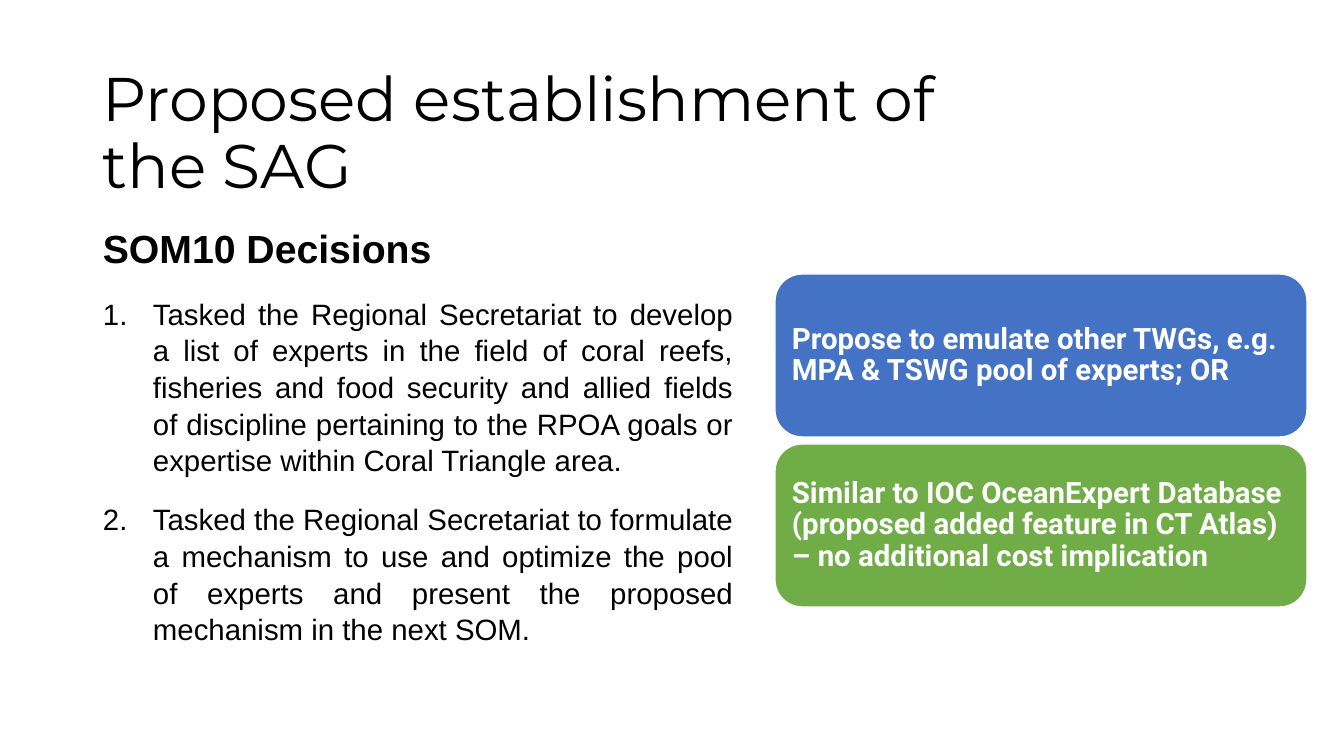
from lxml.etree import SubElement
from pptx import Presentation
from pptx.dml.color import RGBColor
from pptx.enum.shapes import MSO_SHAPE
from pptx.enum.text import MSO_ANCHOR, PP_ALIGN
from pptx.oxml.ns import qn
from pptx.util import Pt

BLACK = RGBColor(0x00, 0x00, 0x00)
WHITE = RGBColor(0xFF, 0xFF, 0xFF)
BLUE = RGBColor(0x44, 0x72, 0xC4)
GREEN = RGBColor(0x70, 0xAD, 0x47)

EMU_PER_PX = 914400 / 100.8
NUMBER_INDENT = 50

DECISIONS = [
    "Tasked the Regional Secretariat to develop a list of experts in the field of "
    "coral reefs, fisheries and food security and allied fields of discipline "
    "pertaining to the RPOA goals or expertise within Coral Triangle area.",
    "Tasked the Regional Secretariat to formulate a mechanism to use and optimize "
    "the pool of experts and present the proposed mechanism in the next SOM.",
]
OPTIONS = [
    ("Propose to emulate other TWGs, e.g. MPA & TSWG pool of experts; OR", BLUE),
    ("Similar to IOC OceanExpert Database (proposed added feature in CT Atlas) "
     "– no additional cost implication", GREEN),
]


def px(length):
    return round(length * EMU_PER_PX)


def write_text(paragraph, text, *, font, size, color=BLACK, bold=False,
               align=PP_ALIGN.LEFT, line_spacing=0.9, before=0, after=0, numbered=False):
    paragraph.alignment = align
    paragraph.line_spacing = line_spacing
    paragraph.space_before = Pt(before)
    paragraph.space_after = Pt(after)
    if numbered:
        properties = paragraph._p.get_or_add_pPr()
        properties.set("marL", str(px(NUMBER_INDENT)))
        properties.set("indent", str(-px(NUMBER_INDENT)))
        SubElement(properties, qn("a:buFont"), typeface="+mj-lt")
        SubElement(properties, qn("a:buAutoNum"), type="arabicPeriod")
    run = paragraph.add_run()
    run.text = text
    run.font.name = font
    run.font.size = Pt(size)
    run.font.bold = bold
    run.font.color.rgb = color


class SlideBuilder:
    title_font = "Montserrat"
    body_font = "Arial"
    card_font = "Roboto"

    def __init__(self, slide):
        self.slide = slide

    def text_frame(self, left, top, width, height, anchor):
        box = self.slide.shapes.add_textbox(px(left), px(top), px(width), px(height))
        frame = box.text_frame
        frame.word_wrap = True
        frame.vertical_anchor = anchor
        return frame

    def title(self, text, *bounds):
        frame = self.text_frame(*bounds, MSO_ANCHOR.MIDDLE)
        write_text(frame.paragraphs[0], text, font=self.title_font, size=44)

    def numbered_list(self, heading, items, *bounds):
        frame = self.text_frame(*bounds, MSO_ANCHOR.TOP)
        style = dict(font=self.body_font, align=PP_ALIGN.JUSTIFY, line_spacing=1.04, after=6)
        write_text(frame.paragraphs[0], heading, size=28, bold=True, **style)
        for item in items:
            write_text(frame.add_paragraph(), item, size=21, before=10, numbered=True, **style)

    def card(self, text, fill, left, top, width, height):
        shape = self.slide.shapes.add_shape(
            MSO_SHAPE.ROUNDED_RECTANGLE, px(left), px(top), px(width), px(height))
        shape.shadow.inherit = False
        shape.fill.solid()
        shape.fill.fore_color.rgb = fill
        shape.line.color.rgb = WHITE
        shape.line.width = Pt(1)
        frame = shape.text_frame
        frame.word_wrap = True
        frame.vertical_anchor = MSO_ANCHOR.MIDDLE
        frame.margin_left = frame.margin_right = px(9)
        frame.margin_top = frame.margin_bottom = px(9)
        write_text(frame.paragraphs[0], text, font=self.card_font, size=21,
                   color=WHITE, bold=True)


def main():
    presentation = Presentation()
    presentation.slide_width = px(1344)
    presentation.slide_height = px(756)
    builder = SlideBuilder(presentation.slides.add_slide(presentation.slide_layouts[6]))

    builder.title("Proposed establishment of the SAG", 93, 62, 900, 146)
    builder.numbered_list("SOM10 Decisions", DECISIONS, 93, 218, 650, 514)

    card_height, card_gap = 163, 7
    for index, (text, fill) in enumerate(OPTIONS):
        top = 274 + index * (card_height + card_gap)
        builder.card(text, fill, 775, top, 532, card_height)

    presentation.save("out.pptx")


if __name__ == "__main__":
    main()
